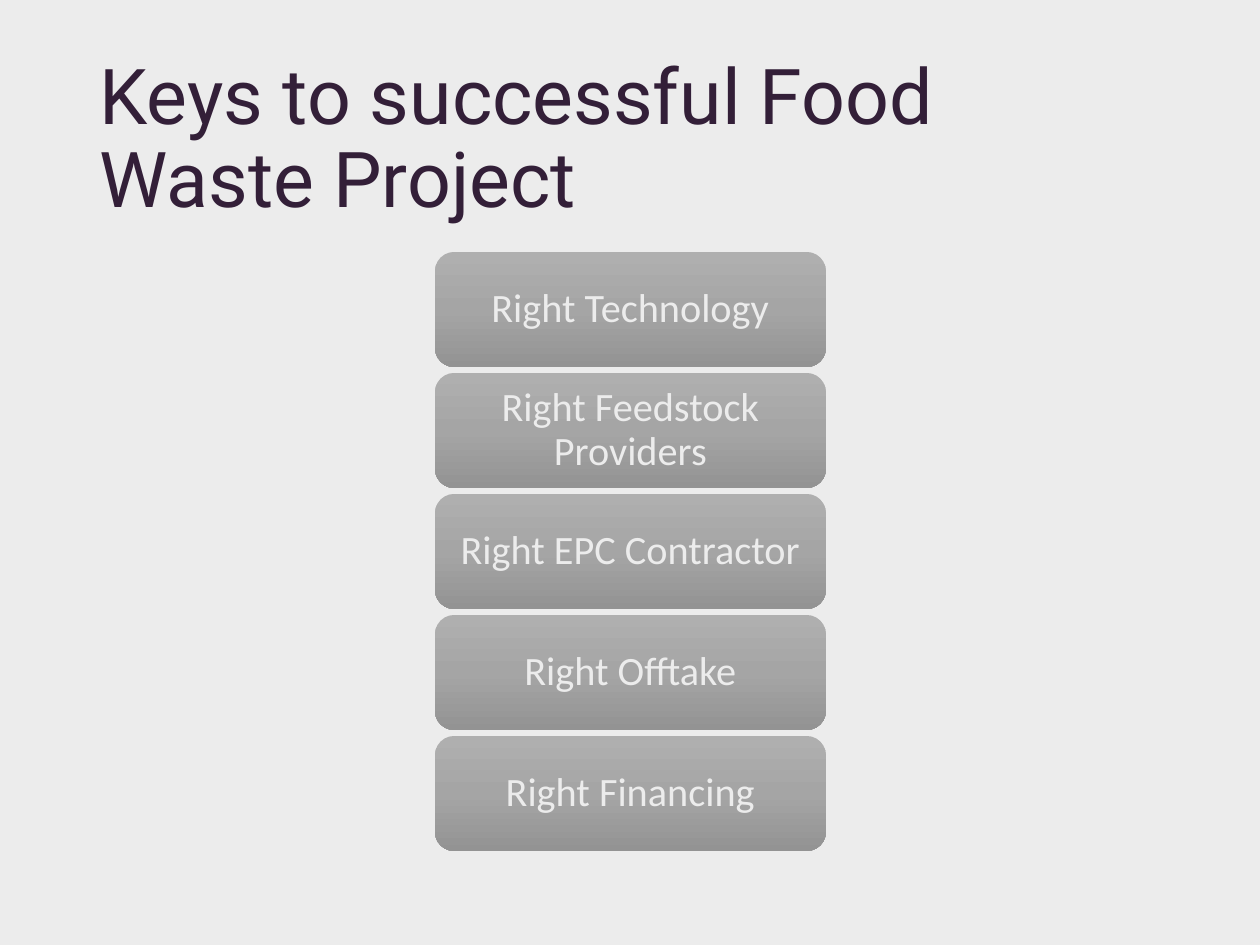
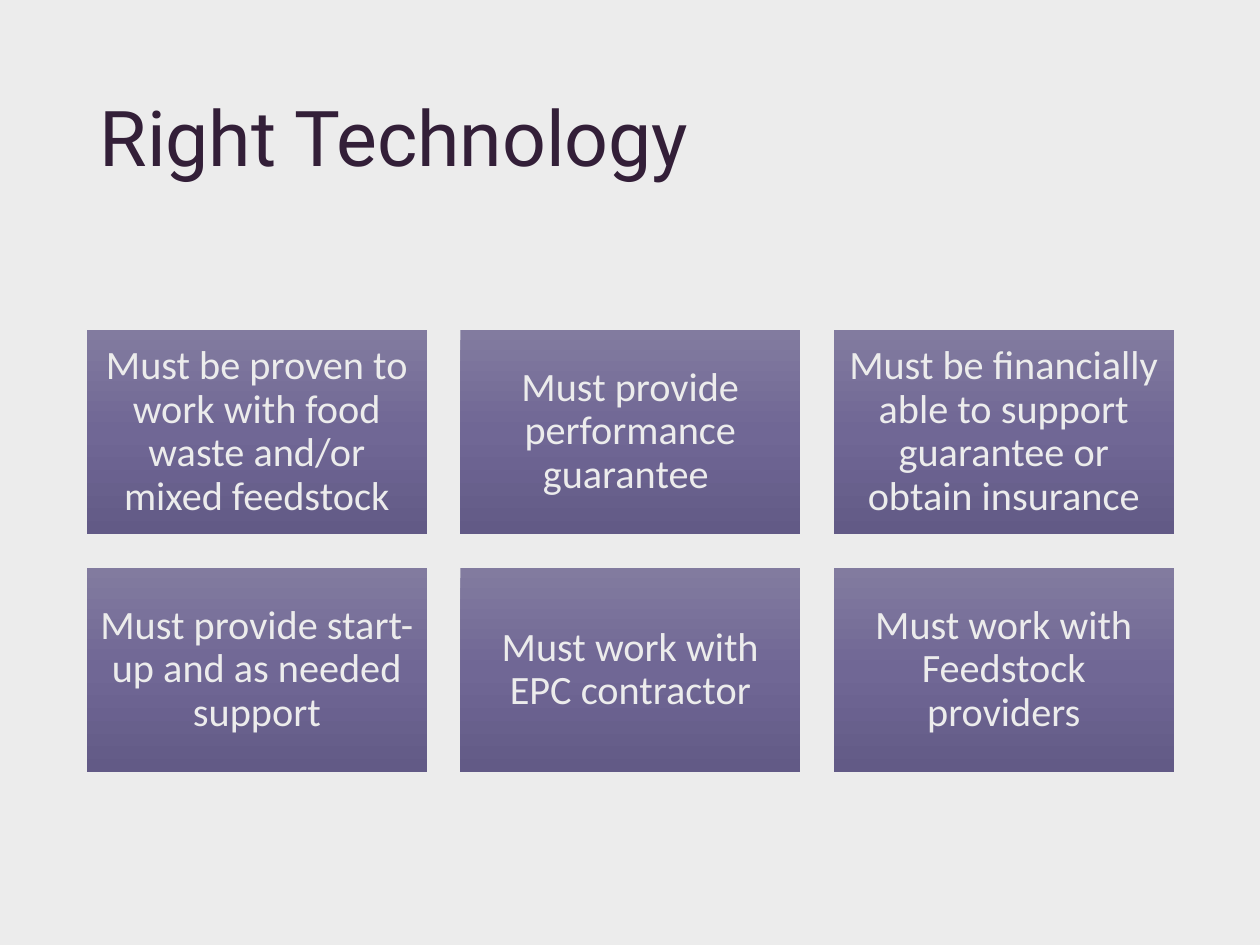
from copy import deepcopy

from pptx import Presentation
from pptx import util as u
from pptx.dml.color import RGBColor
from pptx.enum import shapes, text

# Content
KEYS_TITLE = "Keys to successful Food Waste Project"
KEYS = [
    "Right Technology",
    "Right Feedstock Providers",
    "Right EPC Contractor",
    "Right Offtake",
    "Right Financing",
]
TECHNOLOGY_TITLE = "Right Technology"
REQUIREMENTS = [
    "Must be proven to work with food waste and/or mixed feedstock",
    "Must provide performance guarantee ",
    "Must be financially able to support guarantee or obtain insurance",
    "Must provide start-up and as needed support",
    "Must work with EPC contractor",
    "Must work with Feedstock providers",
]

# Shared look
COLORS = {"background": "ECECEC", "title": "331F38", "card_text": "ECECEC"}
GRADIENTS = {
    "gray": ["AFAFAF", "A5A5A5", "939393"],
    "purple": ["827B9F", "706795", "625A86"],
}
TITLE_FONT = {"name": "Roboto", "size": u.Pt(44)}
CARD_FONT = {"name": "Calibri", "size": u.Pt(23)}

# Layout in px
EMU_PER_PX = 914400 / 126
SLIDE_SIZE = (1260, 945)
TITLE_BOX = (87, 50, 1086, 183)
KEY_GRID = {
    "area": (435, 252, 391, 599), "card": (391, 115), "columns": 1,
    "outline": shapes.MSO_SHAPE.ROUNDED_RECTANGLE, "gradient": "gray",
    "margins": (13, 6),
}
REQUIREMENT_GRID = {
    "area": (87, 330, 1087, 442), "card": (340, 204), "columns": 3,
    "outline": shapes.MSO_SHAPE.RECTANGLE, "gradient": "purple",
    "margins": (13, 13),
}


def px(length):
    return u.Emu(round(length * EMU_PER_PX))


def set_all(target, values):
    for name, value in values.items():
        setattr(target, name, value)


def write(shape, words, font, color, align):
    set_all(shape.text_frame, {
        "text": words,
        "word_wrap": True,
        "auto_size": text.MSO_AUTO_SIZE.NONE,
        "vertical_anchor": text.MSO_ANCHOR.MIDDLE,
    })
    paragraph = shape.text_frame.paragraphs[0]
    set_all(paragraph, {"alignment": align, "line_spacing": 0.9})
    set_all(paragraph.font, font)
    paragraph.font.color.rgb = RGBColor.from_string(COLORS[color])


def fill_gradient(shape, colors):
    shape.fill.gradient()
    shape.fill.gradient_angle = 270
    stop_list = shape.fill._xPr.find(".//{*}gsLst")
    stop_list.insert(1, deepcopy(stop_list[0]))
    for index, (stop, color) in enumerate(zip(shape.fill.gradient_stops, colors)):
        stop.position = index / (len(colors) - 1)
        stop.color.rgb = RGBColor.from_string(color)


def add_titled_slide(presentation, title):
    slide = presentation.slides.add_slide(presentation.slide_layouts[5])
    shape = slide.shapes.title
    set_all(shape, dict(zip(("left", "top", "width", "height"), map(px, TITLE_BOX))))
    write(shape, title, TITLE_FONT, "title", text.PP_ALIGN.LEFT)
    return slide


def pitch(span, size, count):
    """Step between equal cards that fill a span."""
    return (span - size) / max(count - 1, 1)


def add_cards(slide, labels, grid):
    left, top, span_x, span_y = grid["area"]
    width, height = grid["card"]
    columns = grid["columns"]
    step_x = pitch(span_x, width, columns)
    step_y = pitch(span_y, height, len(labels) // columns)
    side, edge = map(px, grid["margins"])
    for index, label in enumerate(labels):
        row, column = divmod(index, columns)
        card = slide.shapes.add_shape(
            grid["outline"], px(left + column * step_x), px(top + row * step_y),
            px(width), px(height))
        card.shadow.inherit = False
        card.line.fill.background()
        fill_gradient(card, GRADIENTS[grid["gradient"]])
        set_all(card.text_frame, {
            "margin_left": side, "margin_right": side,
            "margin_top": edge, "margin_bottom": edge,
        })
        write(card, label, CARD_FONT, "card_text", text.PP_ALIGN.CENTER)


def main():
    presentation = Presentation()
    presentation.slide_width, presentation.slide_height = map(px, SLIDE_SIZE)
    background = presentation.slide_master.background.fill
    background.solid()
    background.fore_color.rgb = RGBColor.from_string(COLORS["background"])

    # Stack of keys, then grid of requirements
    add_cards(add_titled_slide(presentation, KEYS_TITLE), KEYS, KEY_GRID)
    add_cards(add_titled_slide(presentation, TECHNOLOGY_TITLE), REQUIREMENTS,
              REQUIREMENT_GRID)
    presentation.save("out.pptx")


if __name__ == "__main__":
    main()
